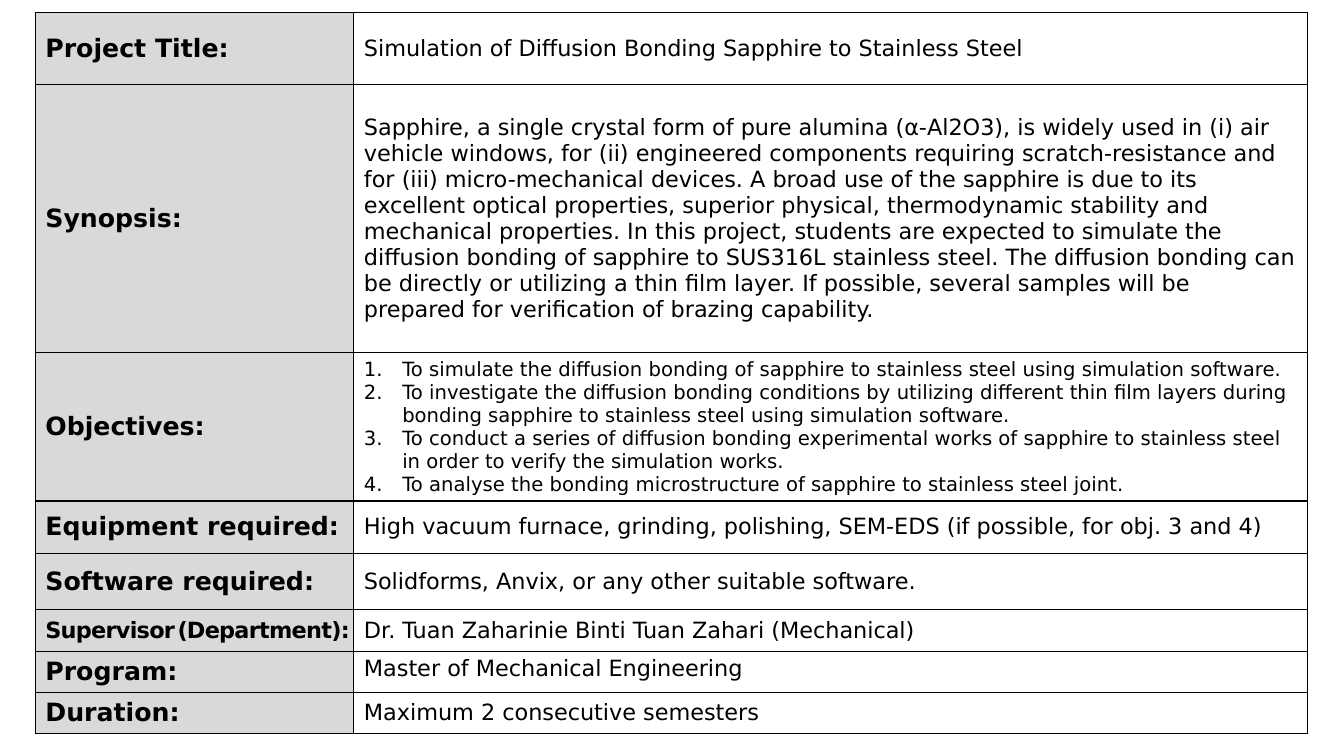
from dataclasses import dataclass

from lxml import etree
from pptx import Presentation
from pptx import util as u
from pptx.dml.color import RGBColor
from pptx.enum import text as t
from pptx.oxml import ns
from pptx.table import _Cell

BLACK = RGBColor(0x00, 0x00, 0x00)
WHITE = RGBColor(0xFF, 0xFF, 0xFF)
LABEL_GREY = RGBColor(0xD9, 0xD9, 0xD9)
FONT = "DejaVu Sans"
COLUMN_WIDTHS = (3.16, 9.46)
TABLE_HEIGHT = 7.18


@dataclass(frozen=True)
class Run:
    text: str
    size: float
    spacing: float = 0


@dataclass(frozen=True)
class Row:
    height: float
    label: str | tuple[Run, ...]
    lines: tuple[str, ...]
    size: float = 16
    numbered: bool = False
    anchor: t.MSO_ANCHOR = t.MSO_ANCHOR.MIDDLE


SUPERVISOR_LABEL = (
    Run("Supervisor", 16, -0.5),
    Run(" ", 5, -0.5),
    Run("(Department):", 16, -0.5),
)

ROWS = (
    Row(0.72, "Project Title:", ("Simulation of Diffusion Bonding Sapphire to Stainless Steel",)),
    Row(2.66, "Synopsis:", (
        "Sapphire, a single crystal form of pure alumina (α-Al2O3), is widely used in (i) air "
        "vehicle windows, for (ii) engineered components requiring scratch-resistance and for "
        "(iii) micro-mechanical devices. A broad use of the sapphire is due to its excellent "
        "optical properties, superior physical, thermodynamic stability and mechanical "
        "properties. In this project, students are expected to simulate the diffusion bonding "
        "of sapphire to SUS316L stainless steel. The diffusion bonding can be directly or "
        "utilizing a thin film layer. If possible, several samples will be prepared for "
        "verification of brazing capability.",
    )),
    Row(1.14, "Objectives:", (
        "To simulate the diffusion bonding of sapphire to stainless steel using simulation software.",
        "To investigate the diffusion bonding conditions by utilizing different thin film layers "
        "during bonding sapphire to stainless steel using simulation software.",
        "To conduct a series of diffusion bonding experimental works of sapphire to stainless "
        "steel in order to verify the simulation works.",
        "To analyse the bonding microstructure of sapphire to stainless steel joint.",
    ), size=14, numbered=True),
    Row(0.52, "Equipment required:", (
        "High vacuum furnace, grinding, polishing, SEM-EDS (if possible, for obj. 3 and 4)",
    )),
    Row(0.56, "Software required:", ("Solidforms, Anvix, or any other suitable software.",)),
    Row(0.41, SUPERVISOR_LABEL, ("Dr. Tuan Zaharinie Binti Tuan Zahari (Mechanical)",)),
    Row(0.41, "Program:", ("Master of Mechanical Engineering",), anchor=t.MSO_ANCHOR.TOP),
    Row(0.41, "Duration:", ("Maximum 2 consecutive semesters",)),
)


def write_text(cell: _Cell, lines: tuple[tuple[Run, ...], ...], *, bold: bool = False,
               numbered: bool = False) -> None:
    frame = cell.text_frame
    for index, runs in enumerate(lines):
        paragraph = frame.add_paragraph() if index else frame.paragraphs[0]
        if numbered:
            properties = paragraph._p.get_or_add_pPr()
            properties.set("marL", str(u.Inches(0.38)))
            properties.set("indent", str(u.Inches(-0.38)))
            etree.SubElement(properties, ns.qn("a:buFont"), typeface="+mj-lt")
            etree.SubElement(properties, ns.qn("a:buAutoNum"), type="arabicPeriod")
        for item in runs:
            run = paragraph.add_run()
            run.text = item.text
            run.font.name = FONT
            run.font.size = u.Pt(item.size)
            run.font.bold = bold
            run.font.color.rgb = BLACK
            if item.spacing:
                run.font._element.set("spc", str(int(item.spacing * 100)))


def style_cell(cell: _Cell, fill: RGBColor, anchor: t.MSO_ANCHOR) -> None:
    cell.vertical_anchor = anchor
    properties = cell._tc.get_or_add_tcPr()
    for side in ("lnL", "lnR", "lnT", "lnB"):
        line = etree.SubElement(properties, ns.qn(f"a:{side}"), w=str(u.Pt(1)))
        solid = etree.SubElement(line, ns.qn("a:solidFill"))
        etree.SubElement(solid, ns.qn("a:srgbClr"), val=str(BLACK))
    cell.fill.solid()
    cell.fill.fore_color.rgb = fill


def main() -> None:
    presentation = Presentation()
    presentation.slide_width = u.Inches(13.33)
    presentation.slide_height = u.Inches(7.5)
    slide = presentation.slides.add_slide(presentation.slide_layouts[6])
    table_shape = slide.shapes.add_table(
        len(ROWS), len(COLUMN_WIDTHS), u.Inches(0.35), u.Inches(0.12),
        u.Inches(sum(COLUMN_WIDTHS)), u.Inches(TABLE_HEIGHT))
    table = table_shape.table
    table.first_row = False
    table.horz_banding = False
    for column, width in zip(table.columns, COLUMN_WIDTHS):
        column.width = u.Inches(width)
    for index, row in enumerate(ROWS):
        table.rows[index].height = u.Inches(row.height)
        label_cell, content_cell = table.rows[index].cells
        style_cell(label_cell, LABEL_GREY, t.MSO_ANCHOR.MIDDLE)
        style_cell(content_cell, WHITE, row.anchor)
        if isinstance(row.label, str):
            label_runs = (Run(row.label, 18),)
        else:
            label_runs = row.label
            label_cell.margin_right = 0
        write_text(label_cell, (label_runs,), bold=True)
        content = tuple((Run(line, row.size),) for line in row.lines)
        write_text(content_cell, content, numbered=row.numbered)
    table_shape.height = u.Inches(TABLE_HEIGHT)
    presentation.save("out.pptx")


if __name__ == "__main__":
    main()
